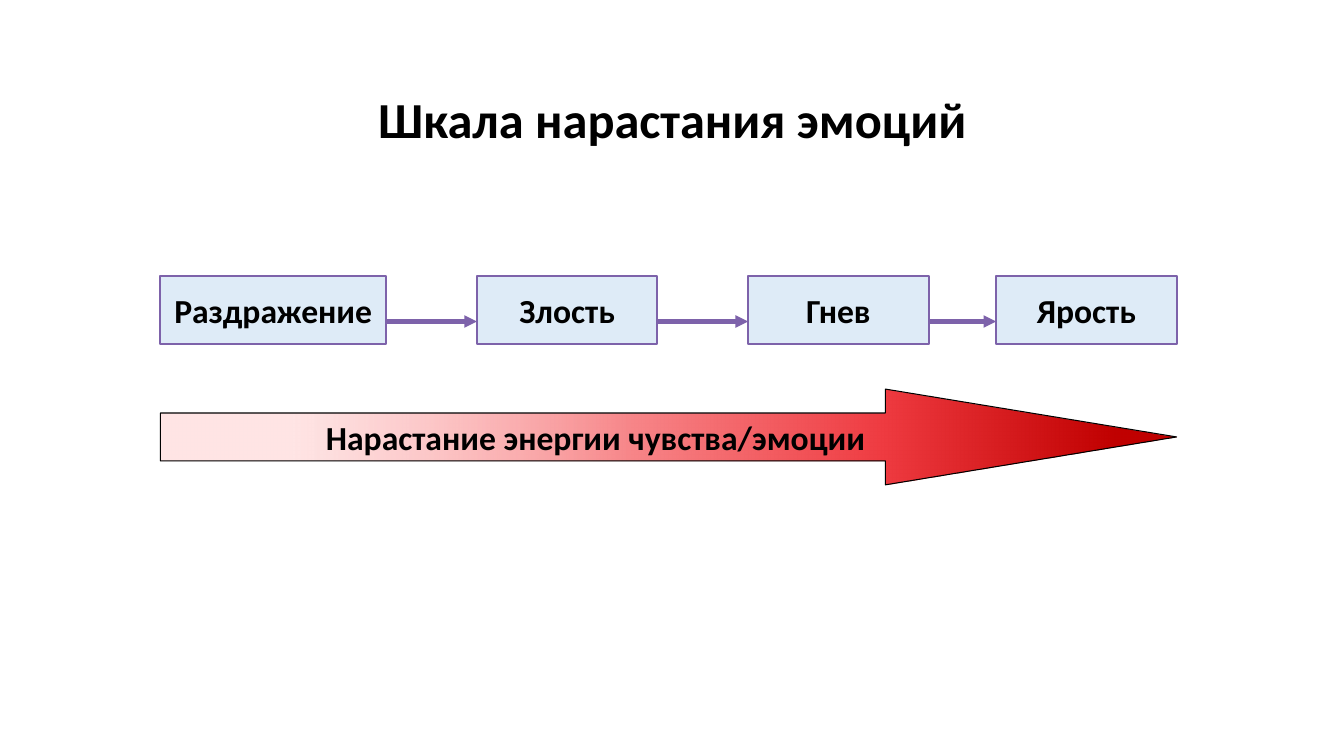
"""Build a slide showing the scale of rising emotions."""
import dataclasses
import itertools

import pptx
import pptx.dml.color
import pptx.enum.shapes
import pptx.enum.text
import pptx.oxml
import pptx.oxml.ns
import pptx.util

EMU_PER_PX = 9144
FONT = "Calibri"
COLOURS = {
    "text": "000000",
    "outline": "000000",
    "box": "DEEBF7",
    "violet": "7D62AA",
    "pale": "FFCCCC",
    "pink": "F78487",
    "red": "EF3B41",
    "dark_red": "C00000",
}
BOX_TOP, BOX_HEIGHT, LINK_Y = 274, 67, 319


@dataclasses.dataclass(frozen=True)
class Emotion:
    name: str
    left: int
    width: int = 179

    @property
    def right(self) -> int:
        return self.left + self.width


@dataclasses.dataclass(frozen=True)
class Stop:
    percent: int
    colour: str
    opacity: int = 100


EMOTIONS = [
    Emotion("Раздражение", 159, 224),
    Emotion("Злость", 473),
    Emotion("Гнев", 742),
    Emotion("Ярость", 988),
]
STOPS = [Stop(13, "pale", 50), Stop(47, "pink"), Stop(71, "red"), Stop(94, "dark_red")]


def px(value: int) -> pptx.util.Emu:
    return pptx.util.Emu(value * EMU_PER_PX)


def rgb(name: str) -> pptx.dml.color.RGBColor:
    return pptx.dml.color.RGBColor.from_string(COLOURS[name])


def write(shape, text: str, *, size: int = 24, spacing: float = 1.0) -> None:
    frame = shape.text_frame
    frame.word_wrap = True
    frame.auto_size = pptx.enum.text.MSO_AUTO_SIZE.NONE
    frame.vertical_anchor = pptx.enum.text.MSO_ANCHOR.MIDDLE
    frame.text = text
    paragraph = frame.paragraphs[0]
    paragraph.alignment = pptx.enum.text.PP_ALIGN.CENTER
    paragraph.line_spacing = spacing
    font = paragraph.runs[0].font
    font.name, font.size, font.bold = FONT, pptx.util.Pt(size), True
    font.color.rgb = rgb("text")


def set_line(shape, colour: str, width: float) -> None:
    shape.line.color.rgb = rgb(colour)
    shape.line.width = pptx.util.Pt(width)


def add_title(slide, text: str) -> None:
    title = slide.shapes.title
    title.left, title.top, title.width, title.height = map(px, (92, 84, 1150, 75))
    write(title, text, size=36, spacing=0.9)


def add_box(slide, emotion: Emotion) -> None:
    shape = slide.shapes.add_shape(
        pptx.enum.shapes.MSO_SHAPE.RECTANGLE,
        px(emotion.left), px(BOX_TOP), px(emotion.width), px(BOX_HEIGHT),
    )
    shape.shadow.inherit = False
    shape.fill.solid()
    shape.fill.fore_color.rgb = rgb("box")
    set_line(shape, "violet", 1.5)
    write(shape, emotion.name)


def add_link(slide, source: Emotion, target: Emotion) -> None:
    connector = slide.shapes.add_connector(
        pptx.enum.shapes.MSO_CONNECTOR.STRAIGHT,
        px(source.right), px(LINK_Y), px(target.left), px(LINK_Y),
    )
    set_line(connector, "violet", 3)
    properties = connector._element.spPr
    line = properties.find(pptx.oxml.ns.qn("a:ln"))
    line.append(pptx.oxml.parse_xml(
        f'<a:tailEnd {pptx.oxml.ns.nsdecls("a")} type="triangle"/>'))
    properties.append(pptx.oxml.parse_xml(
        f'<a:effectLst {pptx.oxml.ns.nsdecls("a")}/>'))


def set_gradient(shape, stops: list[Stop]) -> None:
    shape.fill.gradient()
    shape.fill.gradient_angle = 0
    stop_list = next(shape._element.spPr.iter(pptx.oxml.ns.qn("a:gsLst")))
    for child in list(stop_list):
        stop_list.remove(child)
    for stop in stops:
        stop_list.append(pptx.oxml.parse_xml(
            f'<a:gs {pptx.oxml.ns.nsdecls("a")} pos="{stop.percent * 1000}">'
            f'<a:srgbClr val="{COLOURS[stop.colour]}">'
            f'<a:alpha val="{stop.opacity * 1000}"/></a:srgbClr></a:gs>'))


def add_energy_arrow(slide, text: str) -> None:
    left = EMOTIONS[0].left
    shape = slide.shapes.add_shape(
        pptx.enum.shapes.MSO_SHAPE.RIGHT_ARROW,
        px(left), px(386), px(EMOTIONS[-1].right - left), px(95),
    )
    shape.shadow.inherit = False
    shape.adjustments[0] = 0.5
    shape.adjustments[1] = 3.04
    set_gradient(shape, STOPS)
    set_line(shape, "outline", 0.75)
    write(shape, text)


def main() -> None:
    presentation = pptx.Presentation()
    presentation.slide_width, presentation.slide_height = px(1333), px(750)
    slide = presentation.slides.add_slide(presentation.slide_layouts[5])
    add_title(slide, "Шкала нарастания эмоций")
    for emotion in EMOTIONS:
        add_box(slide, emotion)
    for source, target in itertools.pairwise(EMOTIONS):
        add_link(slide, source, target)
    add_energy_arrow(slide, "Нарастание энергии чувства/эмоции")
    presentation.save("out.pptx")


if __name__ == "__main__":
    main()
